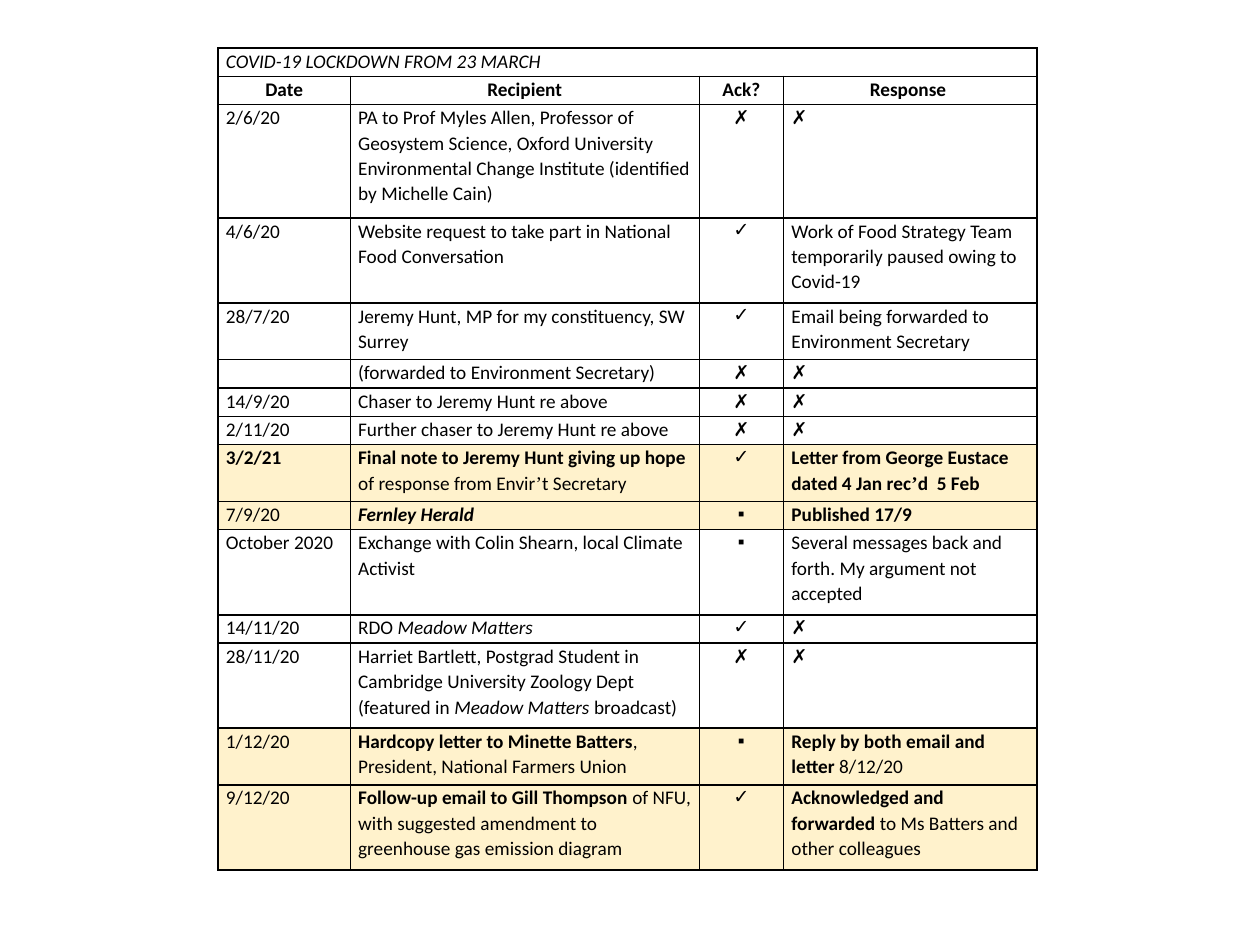
from lxml import etree
from pptx import Presentation
from pptx.dml.color import RGBColor
from pptx.enum.text import PP_ALIGN
from pptx.oxml.ns import qn
from pptx.util import Pt

LEFT, CENTER = PP_ALIGN.LEFT, PP_ALIGN.CENTER
BLACK, CREAM = "000000", "FFF2CC"
FONT, SIZE = "Calibri", 11
FONTS = {"✓": "Arial", "▪": "Arial", "’": "Times New Roman"}
WIDTHS = [75.6, 199.4, 48.2, 144.8]
LINE = 16.2
YES, NO, DOT = "✓", "✗", "▪"

TITLE = [("COVID-19 LOCKDOWN FROM 23 MARCH", "i")]
HEADS = ["Date", "Recipient", "Ack?", "Response "]
ROWS = [
    (4, None, ["2/6/20", "PA to Prof Myles Allen, Professor of Geosystem Science, "
               "Oxford University Environmental Change Institute "
               "(identified by Michelle Cain)", NO, NO]),
    (3, None, ["4/6/20", "Website request to take part in National Food Conversation",
               YES, "Work of Food Strategy Team temporarily paused owing to Covid-19"]),
    (2, None, ["28/7/20", "Jeremy Hunt, MP for my constituency, SW Surrey",
               YES, "Email being forwarded to Environment Secretary"]),
    (1, None, ["", "(forwarded to Environment Secretary)", NO, NO]),
    (1, None, ["14/9/20", "Chaser to Jeremy Hunt re above", NO, NO]),
    (1, None, ["2/11/20", "Further chaser to Jeremy Hunt re above", NO, NO]),
    (2, CREAM, [[("3/2/21", "b")],
                [("Final note to Jeremy Hunt giving up hope", "b"),
                 (" of response from Envir", ""), ("’", ""), ("t Secretary", "")],
                YES,
                [("Letter from George Eustace dated 4 Jan rec", "b"),
                 ("’", "b"), ("d  5 Feb", "b")]]),
    (1, CREAM, ["7/9/20", [("Fernley Herald", "bi")], DOT, [("Published 17/9", "b")]]),
    (3, None, ["October 2020", "Exchange with Colin Shearn, local Climate Activist",
               DOT, "Several messages back and forth. My argument not accepted"]),
    (1, None, ["14/11/20", [("RDO ", ""), ("Meadow Matters", "i")], YES, NO]),
    (3, None, ["28/11/20",
               [("Harriet Bartlett, Postgrad Student in Cambridge University "
                 "Zoology Dept (featured in ", ""),
                ("Meadow Matters", "i"), (" broadcast)", "")], NO, NO]),
    (2, CREAM, ["1/12/20",
                [("Hardcopy letter to Minette Batters", "b"),
                 (", President, National Farmers Union", "")], DOT,
                [("Reply by both email and letter", "b"), (" 8/12/20", "")]]),
    (3, CREAM, ["9/12/20",
                [("Follow-up email to Gill Thompson", "b"),
                 (" of NFU, with suggested amendment to greenhouse gas "
                  "emission diagram", "")], YES,
                [("Acknowledged and forwarded", "b"),
                 (" to Ms Batters and other colleagues", "")]]),
]


def paint(fill, color):
    fill.solid()
    fill.fore_color.rgb = RGBColor.from_string(color)


def write(cell, text, align=LEFT, after=0):
    para = cell.text_frame.paragraphs[0]
    para.alignment = align
    para.line_spacing = 1.07
    para.space_before, para.space_after = Pt(6), Pt(after)
    if not text:
        para._p.get_or_add_endParaRPr().set("sz", str(SIZE * 100))
        return
    parts = [(text, "")] if isinstance(text, str) else text
    for words, style in parts:
        run = para.add_run()
        run.text = words
        font = run.font
        font.name, font.size = FONTS.get(words, FONT), Pt(SIZE)
        font.bold, font.italic = "b" in style, "i" in style
        paint(font.fill, BLACK)


def frame(cell):
    props = cell._tc.get_or_add_tcPr()
    for side in ("lnL", "lnR", "lnT", "lnB"):
        line = etree.SubElement(props, qn("a:" + side), w=str(Pt(1)))
        solid = etree.SubElement(line, qn("a:solidFill"))
        etree.SubElement(solid, qn("a:srgbClr"), val=BLACK)


def dress(cell, color):
    cell.margin_left = cell.margin_right = Pt(4.5)
    cell.margin_top = cell.margin_bottom = 0
    frame(cell)
    if color:
        paint(cell.fill, color)
    else:
        cell.fill.background()


def add_grid(slide):
    count = len(ROWS) + 2
    lines = [1, 1] + [row[0] for row in ROWS]
    tints = [None, None] + [row[1] for row in ROWS]
    grid = slide.shapes.add_table(count, len(WIDTHS), Pt(124.6), Pt(27.4),
                                  Pt(sum(WIDTHS)), Pt(LINE * sum(lines))).table
    grid.first_row = grid.horz_banding = False
    for col, width in zip(grid.columns, WIDTHS):
        col.width = Pt(width)
    for row, size, tint in zip(grid.rows, lines, tints):
        row.height = Pt(LINE * size)
        for cell in row.cells:
            dress(cell, tint)
    return grid


def main():
    deck = Presentation()
    deck.slide_width, deck.slide_height = Pt(720), Pt(540)
    slide = deck.slides.add_slide(deck.slide_layouts[6])
    grid = add_grid(slide)
    grid.cell(0, 0).merge(grid.cell(0, 3))
    write(grid.cell(0, 0), TITLE)
    for col, head in enumerate(HEADS):
        write(grid.cell(1, col), [(head, "b")], align=CENTER, after=6)
    for row, (_, _, texts) in enumerate(ROWS, 2):
        for col, text in enumerate(texts):
            write(grid.cell(row, col), text, align=CENTER if col == 2 else LEFT)
    deck.save("out.pptx")


if __name__ == "__main__":
    main()
